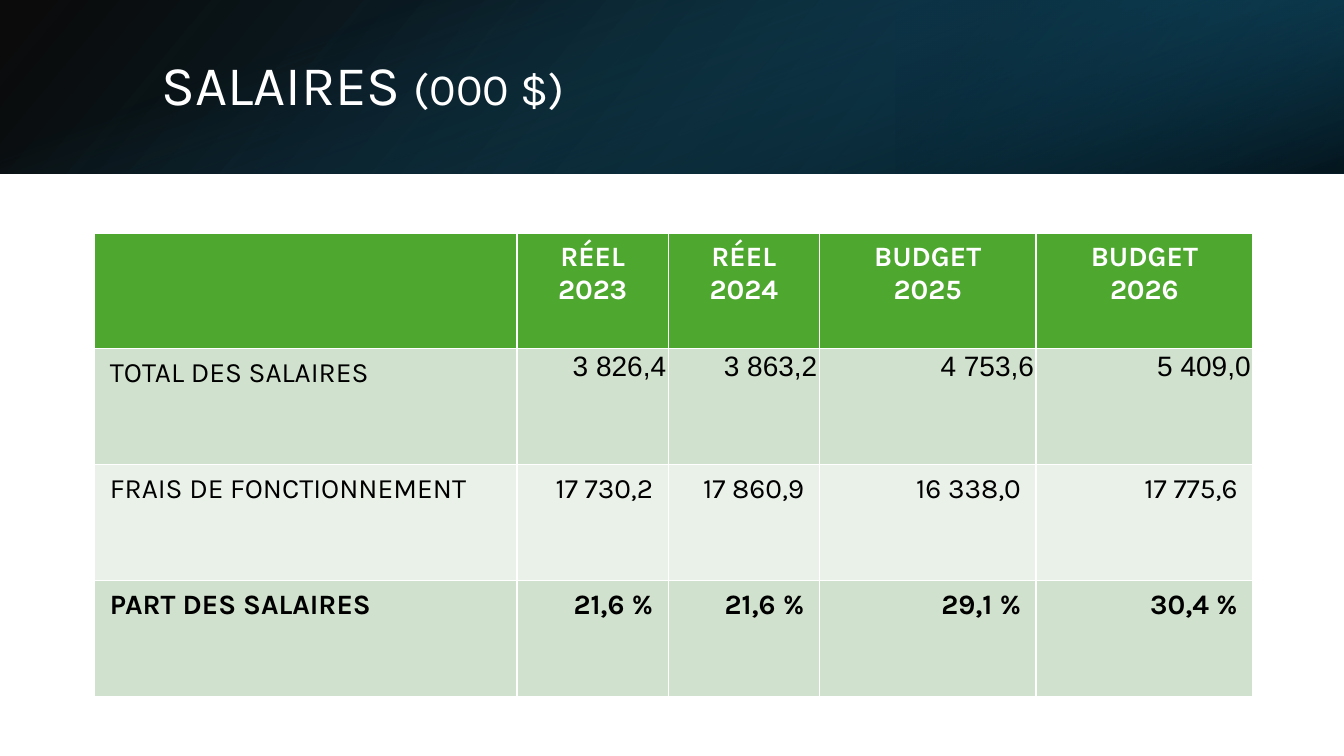
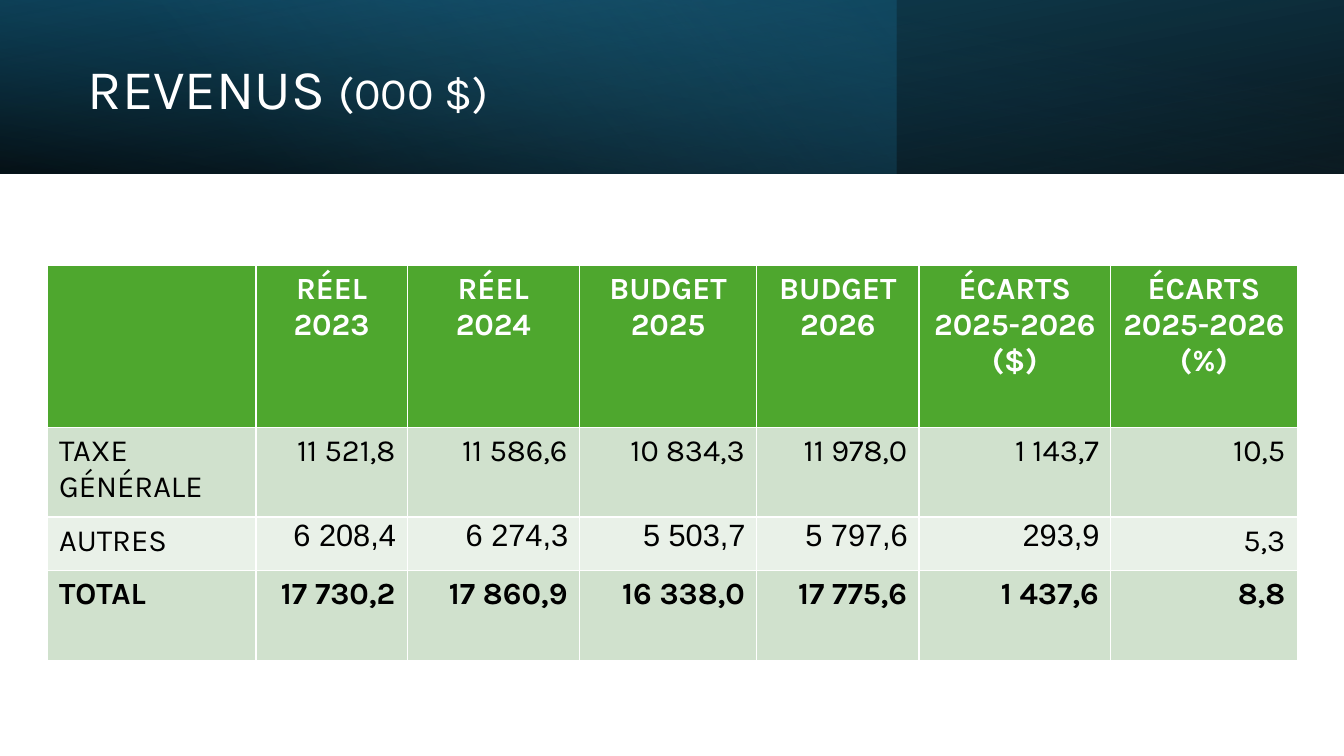
import pptx
import pptx.dml.color
import pptx.enum.shapes
import pptx.enum.text
import pptx.oxml
import pptx.oxml.ns
import pptx.util

Cm = pptx.util.Cm
Pt = pptx.util.Pt
ALIGN = pptx.enum.text.PP_ALIGN

HUES = {
    "white": "FFFFFF",
    "black": "000000",
    "head": "4EA72E",
    "odd": "D0E1CD",
    "even": "E9F1E8",
    "navy": "104862",
    "deep": "0B3041",
    "teal": "156082",
    "sky": "46B1E1",
}
WIDE, TALL, BAND, SEAM = 33.87, 19.05, 4.37, 22.58
SIDES = ("margin_left", "margin_top", "margin_right", "margin_bottom")

PAGES = [
    {
        "title": ("SALAIRES ", "(000 $)"),
        "title_box": (3.81, 0.97, 27.89, 2.44),
        "bands": [
            ((0, 0, WIDE, BAND), 40, (0, "black", 96), (100, "navy", 100)),
            ((SEAM, 0, WIDE - SEAM, BAND), 40, (19, "deep", 68), (100, "teal", 79)),
            ((0, 0, WIDE, BAND), 70, (23, "teal", 0), (99, "black", 74)),
        ],
        "table": {
            "spot": (2.39, 5.87),
            "cols": (10.64, 3.81, 3.81, 5.46, 5.46),
            "rows": (2.92, 2.92, 2.92, 2.92),
            "size": 20,
            "pad": (0.38, 0.2, 0.38, 0.2),
            "tight": (0.05, 0.05, 0.05, 0),
            "plain": (1, range(1, 5)),
            "cells": [
                ("", "RÉEL\n2023", "RÉEL\n2024", "BUDGET\n2025", "BUDGET\n2026"),
                ("TOTAL DES SALAIRES", "3 826,4", "3 863,2", "4 753,6", "5 409,0"),
                ("FRAIS DE FONCTIONNEMENT", "17 730,2", "17 860,9", "16 338,0", "17 775,6"),
                ("PART DES SALAIRES", "21,6 %", "21,6 %", "29,1 %", "30,4 %"),
            ],
        },
    },
    {
        "title": ("REVENUS ", "(000 $)"),
        "title_box": (1.96, 0.69, 19.61, 3.23),
        "bands": [
            ((0, 0, WIDE, BAND), 260, (0, "black", 96), (100, "navy", 100)),
            ((0, 0, SEAM, BAND), 140, (0, "teal", 41), (74, "sky", 0)),
            ((0, 0, WIDE, BAND), 280, (0, "black", 63), (78, "teal", 15)),
        ],
        "table": {
            "spot": (1.19, 6.68),
            "cols": (5.26, 3.81, 4.34, 4.47, 4.09, 4.83, 4.7),
            "rows": (4.09, 2.26, 1.35, 2.26),
            "size": 22,
            "pad": (0.3, 0.15, 0.3, 0.15),
            "tight": (0.03, 0.03, 0.28, 0),
            "plain": (2, range(1, 6)),
            "cells": [
                ("", "RÉEL\n2023", "RÉEL\n2024", "BUDGET\n2025", "BUDGET\n2026",
                 "ÉCARTS\n2025-2026\n($)", "ÉCARTS\n2025-2026\n(%)"),
                ("TAXE GÉNÉRALE", "11 521,8", "11 586,6", "10 834,3", "11 978,0", "1 143,7", "10,5"),
                ("AUTRES", "6 208,4", "6 274,3", "5 503,7", "5 797,6", "293,9", "5,3"),
                ("TOTAL", "17 730,2", "17 860,9", "16 338,0", "17 775,6", "1 437,6", "8,8"),
            ],
        },
    },
]


def hue(name):
    return pptx.dml.color.RGBColor.from_string(HUES[name])


def put(item, form):
    for key, value in form.items():
        setattr(item, key, value)


def style(font, size, tint, name="Karla", bold=False):
    put(font, {"size": Pt(size), "name": name, "bold": bold})
    font.color.rgb = hue(tint)


def add_band(slide, box, angle, *stops):
    band = slide.shapes.add_shape(
        pptx.enum.shapes.MSO_SHAPE.RECTANGLE, *map(Cm, box))
    band.shadow.inherit = False
    band.line.fill.background()
    band.fill.gradient()
    band.fill.gradient_angle = 360 - angle
    for stop, (place, tint, alpha) in zip(band.fill.gradient_stops, stops):
        stop.position = place / 100
        stop.color.rgb = hue(tint)
    marks = band.element.iter(pptx.oxml.ns.qn("a:srgbClr"))
    for mark, (place, tint, alpha) in zip(marks, stops):
        veil = pptx.oxml.parse_xml(
            f'<a:alpha {pptx.oxml.ns.nsdecls("a")} val="{alpha * 1000}"/>')
        mark.append(veil)


def add_title(slide, box, words):
    title = slide.shapes.title
    put(title, dict(zip(("left", "top", "width", "height"), map(Cm, box))))
    title.element.getparent().append(title.element)
    frame = title.text_frame
    put(frame, {
        "word_wrap": True,
        "auto_size": pptx.enum.text.MSO_AUTO_SIZE.NONE,
        "vertical_anchor": pptx.enum.text.MSO_ANCHOR.MIDDLE,
    })
    line = frame.paragraphs[0]
    put(line, {"alignment": ALIGN.LEFT, "line_spacing": 0.9})
    for text, size in zip(words, (40, 32)):
        run = line.add_run()
        run.text = text
        style(run.font, size, "white")


def fill_cell(cell, text, pad, back, align, **look):
    put(cell, dict(zip(SIDES, map(Cm, pad))))
    cell.fill.solid()
    cell.fill.fore_color.rgb = hue(back)
    cell.text = text
    for line in cell.text_frame.paragraphs:
        line.alignment = align
        for run in line.runs:
            style(run.font, **look)


def add_grid(slide, data):
    rows, cols, cells = data["rows"], data["cols"], data["cells"]
    box = (*data["spot"], sum(cols), sum(rows))
    grid = slide.shapes.add_table(len(rows), len(cols), *map(Cm, box)).table
    for col, width in zip(grid.columns, cols):
        col.width = Cm(width)
    for row, height in zip(grid.rows, rows):
        row.height = Cm(height)
    plain_row, plain_cols = data["plain"]
    last = len(rows) - 1
    for r, texts in enumerate(cells):
        head = r == 0
        back = "head" if head else "odd" if r % 2 else "even"
        for c, text in enumerate(texts):
            plain = r == plain_row and c in plain_cols
            align = ALIGN.CENTER if head else ALIGN.RIGHT if c else ALIGN.LEFT
            fill_cell(
                grid.cell(r, c), text, data["tight" if plain else "pad"],
                back, align,
                size=data["size"], tint="white" if head else "black",
                name="Arial" if plain else "Karla", bold=r in (0, last))


def add_page(deck, page):
    slide = deck.slides.add_slide(deck.slide_layouts[5])
    for band in page["bands"]:
        add_band(slide, *band)
    add_title(slide, page["title_box"], page["title"])
    add_grid(slide, page["table"])


def main():
    deck = pptx.Presentation()
    put(deck, {"slide_width": Cm(WIDE), "slide_height": Cm(TALL)})
    for page in PAGES:
        add_page(deck, page)
    deck.save("out.pptx")


if __name__ == "__main__":
    main()
